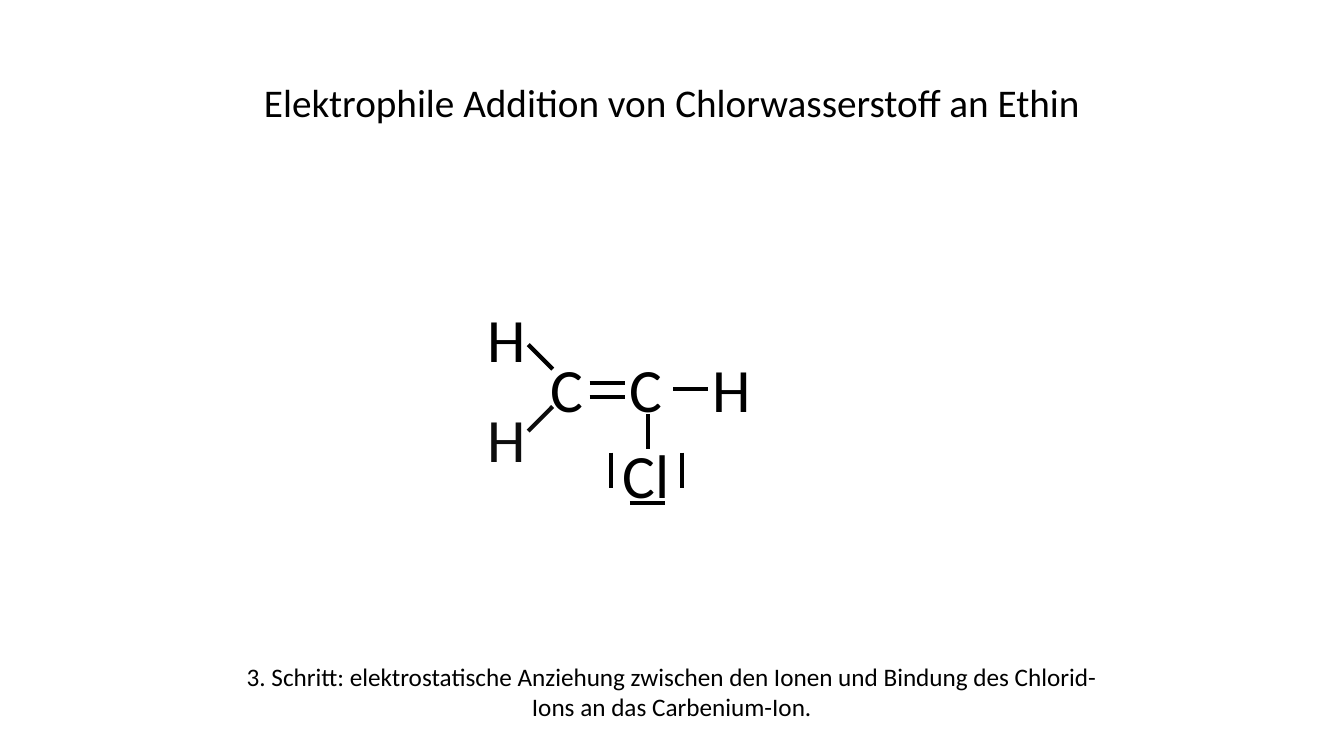
"""Build the slide on the addition of hydrogen chloride to ethyne."""
import pptx
import pptx.util
import pptx.dml.color
import pptx.enum.shapes
import pptx.enum.text
import pptx.oxml.ns
import lxml.etree

Pt = pptx.util.Pt
BLACK, SOFT_BLACK = "000000", "0D0D0D"
BOND = 25
DIAGONAL = 17.5

CAPTIONS = [
    ("Elektrophile Addition von Chlorwasserstoff an Ethin", 52.6, 41, 28),
    ("3. Schritt: elektrostatische Anziehung zwischen den Ionen und "
     "Bindung des Chlorid-Ions an das Carbenium-Ion.", 468.7, 51, 18),
]
ATOMS = [
    ("C", 385.9, 247, 41.8, BLACK),
    ("C", 442.8, 247, 41.8, BLACK),
    ("H", 341.3, 211.7, 41.8, BLACK),
    ("H", 501.8, 247, 41.8, BLACK),
    ("H", 341.3, 283, 41.8, SOFT_BLACK),
    ("Cl", 437.8, 308.2, 69.1, BLACK),
]
HORIZONTAL = [(481, 278), (421.2, 273.6), (421.2, 283.7), (450, 359.3)]
VERTICAL = [(463, 296), (436.3, 323.3), (487.4, 323.3)]


def rgb(value):
    return pptx.dml.color.RGBColor.from_string(value)


def add_text(s, text, x, y, w, h, size, color=BLACK, centered=False):
    sp = s.shapes.add_textbox(Pt(x), Pt(y), Pt(w), Pt(h))
    tf = sp.text_frame
    tf.word_wrap = True
    tf.text = text
    p = tf.paragraphs[0]
    if centered:
        p.alignment = pptx.enum.text.PP_ALIGN.CENTER
    font = p.runs[0].font
    font.name, font.size = "Calibri", Pt(size)
    font.color.rgb = rgb(color)


def add_bond(s, x, y, dx, dy, color=BLACK):
    line = s.shapes.add_connector(
        pptx.enum.shapes.MSO_CONNECTOR.STRAIGHT,
        Pt(x), Pt(y), Pt(x + dx), Pt(y + dy))
    line.line.width = Pt(3)
    line.line.color.rgb = rgb(color)
    lxml.etree.SubElement(line._element.spPr, pptx.oxml.ns.qn("a:effectLst"))


def main():
    prs = pptx.Presentation()
    prs.slide_width, prs.slide_height = Pt(960), Pt(540)
    s = prs.slides.add_slide(prs.slide_layouts[6])
    for x, y in HORIZONTAL:
        add_bond(s, x, y, BOND, 0)
    for x, y in VERTICAL:
        add_bond(s, x, y, 0, BOND)
    add_bond(s, 377.3, 246.2, DIAGONAL, DIAGONAL)
    add_bond(s, 394.8, 290.4, -DIAGONAL, DIAGONAL, SOFT_BLACK)
    for symbol, x, y, w, color in ATOMS:
        add_text(s, symbol, x, y, w, 60.5, 44, color)
    for text, y, h, size in CAPTIONS:
        add_text(s, text, 155.5, y, 648.7, h, size, centered=True)
    prs.save("out.pptx")


if __name__ == "__main__":
    main()
